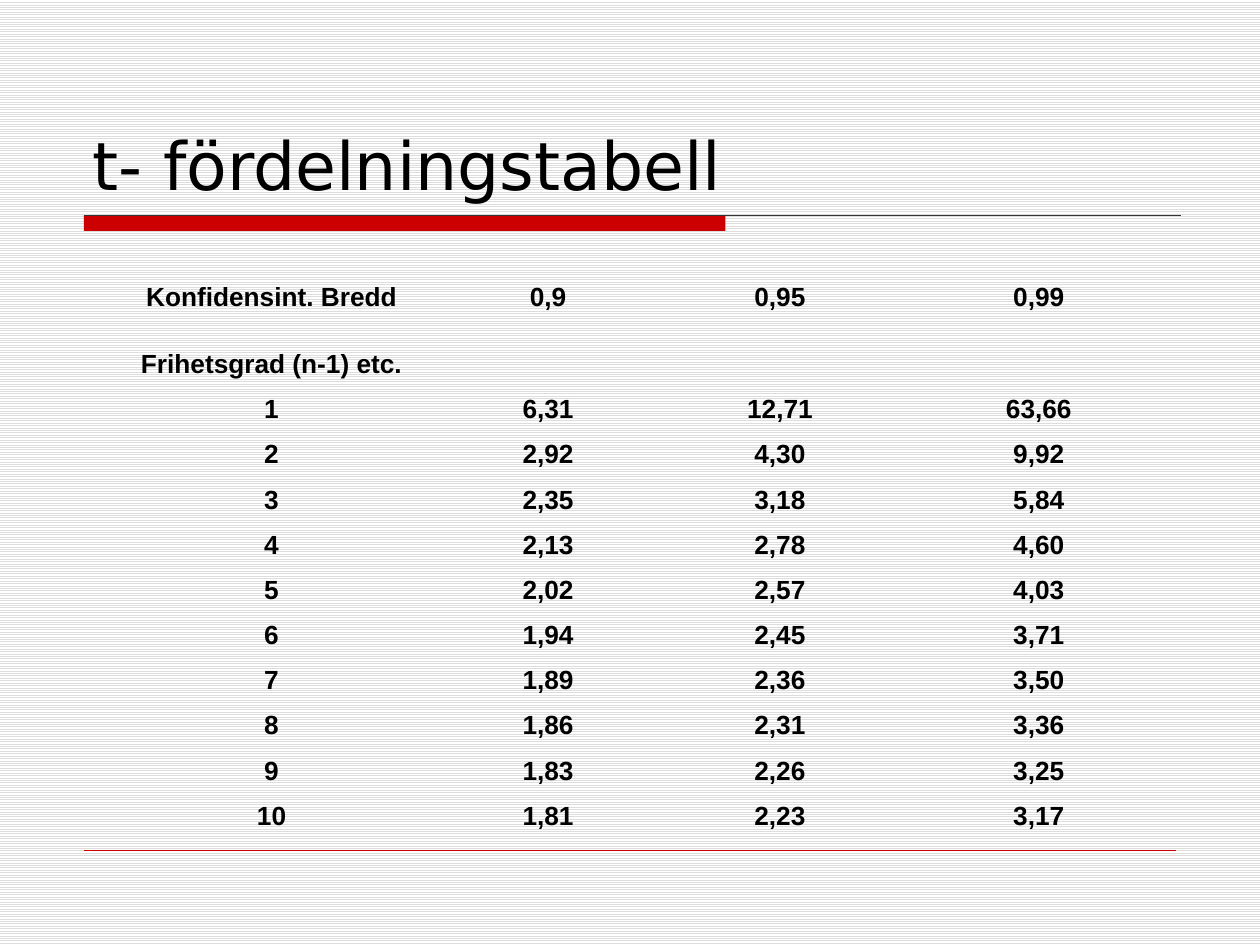
from lxml.etree import SubElement
from pptx import Presentation
from pptx.dml.color import RGBColor
from pptx.enum.dml import MSO_PATTERN
from pptx.enum.shapes import MSO_CONNECTOR, MSO_SHAPE
from pptx.enum.text import MSO_ANCHOR as Anchor, PP_ALIGN as Align
from pptx.oxml.ns import qn
from pptx.util import Pt

NO_STYLE = "{2D5ABB26-0587-4C30-8999-92F81FD0307C}"
TITLE_FONT = {"name": "DejaVu Sans", "size": Pt(38), "bold": False}
CELL_FONT = {"name": "Arial", "size": Pt(15), "bold": True}
COLUMN_WIDTHS = [202.3, 113.8, 151.2, 144.7]
ROW_HEIGHT, SUBHEAD_HEIGHT = 25.83, 38.3
T_VALUES = [
    ["6,31", "12,71", "63,66"],
    ["2,92", "4,30", "9,92"],
    ["2,35", "3,18", "5,84"],
    ["2,13", "2,78", "4,60"],
    ["2,02", "2,57", "4,03"],
    ["1,94", "2,45", "3,71"],
    ["1,89", "2,36", "3,50"],
    ["1,86", "2,31", "3,36"],
    ["1,83", "2,26", "3,25"],
    ["1,81", "2,23", "3,17"],
]


def color(value):
    return RGBColor.from_string(value)


class SlideBuilder:
    """Draws styled elements on the current slide."""

    ink, accent, rule = "000000", "CC0000", "333333"

    def __init__(self, slide):
        self.slide = slide

    def background(self, fore, back):
        fill = self.slide.background.fill
        fill.patterned()
        fill.pattern = MSO_PATTERN.LIGHT_HORIZONTAL
        fill.fore_color.rgb = color(fore)
        fill.back_color.rgb = color(back)

    def add_text(self, paragraph, text, style):
        run = paragraph.add_run()
        run.text = text
        for name, value in style.items():
            setattr(run.font, name, value)
        run.font.color.rgb = color(self.ink)

    def title(self, text, *box):
        frame = self.slide.shapes.add_textbox(*map(Pt, box)).text_frame
        frame.word_wrap = True
        frame.vertical_anchor = Anchor.BOTTOM
        self.add_text(frame.paragraphs[0], text, TITLE_FONT)

    def bar(self, *box):
        shape = self.slide.shapes.add_shape(MSO_SHAPE.RECTANGLE, *map(Pt, box))
        shape.shadow.inherit = False
        shape.fill.solid()
        shape.fill.fore_color.rgb = color(self.accent)
        shape.line.fill.background()

    def horizontal_line(self, left, right, y, line_color, width):
        connector = self.slide.shapes.add_connector(
            MSO_CONNECTOR.STRAIGHT, Pt(left), Pt(y), Pt(right), Pt(y))
        connector.line.color.rgb = color(line_color)
        connector.line.width = Pt(width)
        SubElement(connector._element.spPr, qn("a:effectLst"))

    def table(self, left, top, widths, heights, rows):
        box = map(Pt, (left, top, sum(widths), sum(heights)))
        table = self.slide.shapes.add_table(len(rows), len(widths), *box).table
        table.first_row = table.horz_banding = False
        table._tbl.tblPr.find(qn("a:tableStyleId")).text = NO_STYLE
        for column, width in zip(table.columns, widths):
            column.width = Pt(width)
        for row, height, texts in zip(table.rows, heights, rows):
            row.height = Pt(height)
            for cell, text in zip(row.cells, texts):
                cell.fill.background()
                cell.vertical_anchor = Anchor.BOTTOM
                paragraph = cell.text_frame.paragraphs[0]
                paragraph.alignment = Align.CENTER
                if text:
                    self.add_text(paragraph, text, CELL_FONT)


def main():
    presentation = Presentation()
    presentation.slide_width, presentation.slide_height = Pt(720), Pt(540)
    builder = SlideBuilder(presentation.slides.add_slide(presentation.slide_layouts[6]))
    builder.background("DDDDDD", "FFFFFF")
    builder.bar(48, 123, 366.5, 9)
    builder.horizontal_line(48, 674.8, 123, builder.rule, 0.75)
    builder.horizontal_line(48, 672, 486, builder.accent, 0.25)
    builder.title("t- fördelningstabell", 45.5, 24, 630, 96)
    rows = [["Konfidensint. Bredd", "0,9", "0,95", "0,99"],
            ["Frihetsgrad (n-1) etc.", "", "", ""]]
    rows += [[str(degree), *values] for degree, values in enumerate(T_VALUES, 1)]
    heights = [ROW_HEIGHT, SUBHEAD_HEIGHT] + [ROW_HEIGHT] * len(T_VALUES)
    builder.table(54, 156, COLUMN_WIDTHS, heights, rows)
    presentation.save("out.pptx")


if __name__ == "__main__":
    main()
